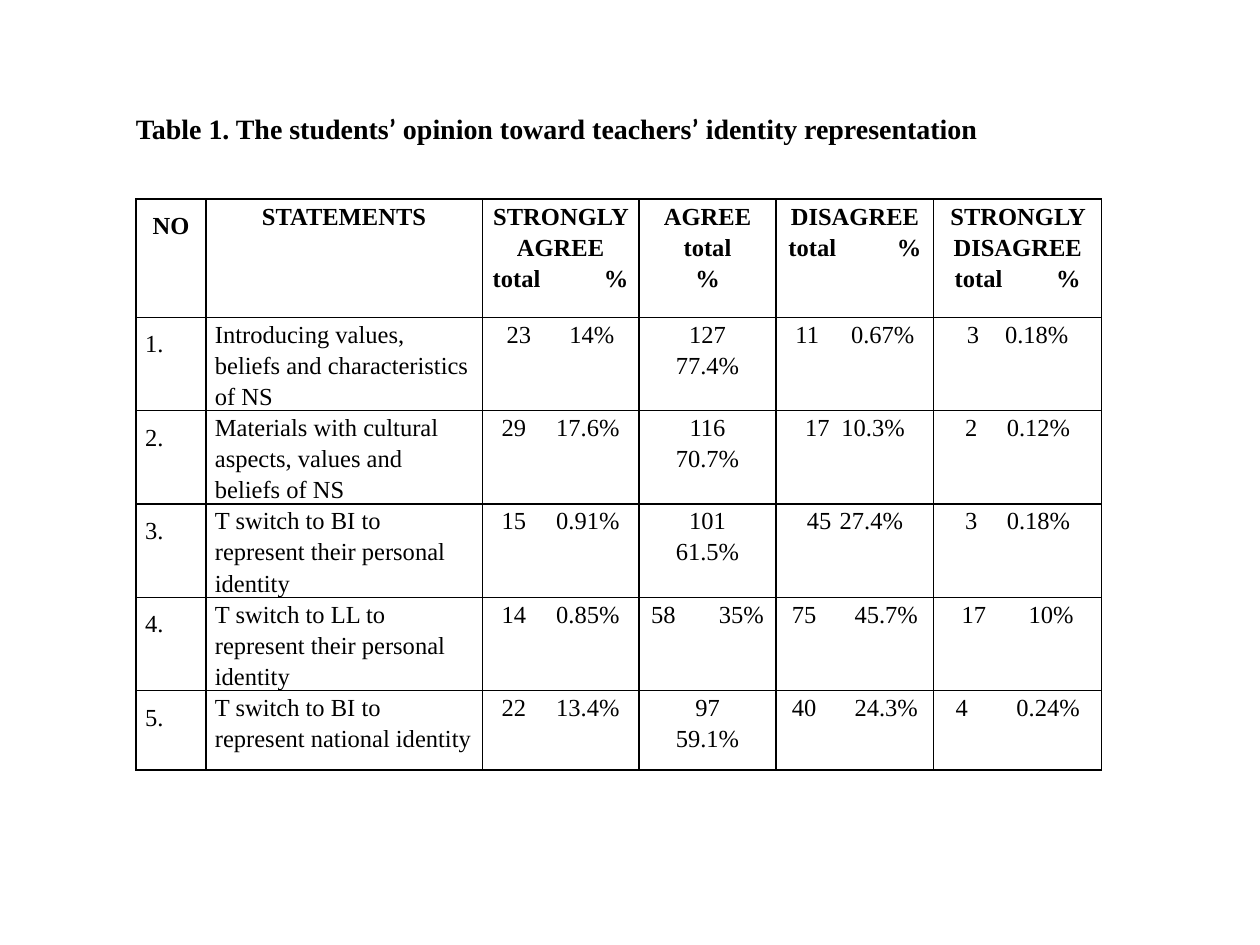
from dataclasses import dataclass

import pptx
import pptx.dml.color
import pptx.enum.text
import pptx.oxml.ns
import pptx.util
from lxml import etree

Pt = pptx.util.Pt
ALIGN = pptx.enum.text.PP_ALIGN
BLACK = pptx.dml.color.RGBColor(0x00, 0x00, 0x00)
WHITE = pptx.dml.color.RGBColor(0xFF, 0xFF, 0xFF)
FONT = "Times New Roman"
QUOTE_FONT = "Calibri"
TITLE = "Table 1. The students’ opinion toward teachers’ identity representation"
TABLE_LEFT, TABLE_TOP = 77.8, 113.8
COLUMN_WIDTHS = [39.8, 158, 89.5, 78.5, 90, 96]
HEADER_HEIGHT, ROW_HEIGHT = 67.5, 45.4
CELL_MARGIN = 5.2


@dataclass(frozen=True)
class Share:
    """A total and its percentage, set apart by inset from both cell edges.

    Without an inset the two stand centred, one below the other.
    """
    total: str
    percent: str
    inset: float | None = None


@dataclass(frozen=True)
class Heading:
    label: str
    share: Share


@dataclass(frozen=True)
class Statement:
    text: str
    shares: tuple[Share, ...]


HEADINGS = [
    Heading("STRONGLY AGREE", Share("total", "%", 6)),
    Heading("AGREE", Share("total", "%")),
    Heading("DISAGREE", Share("total", "%", 7)),
    Heading("STRONGLY DISAGREE", Share("total", "%", 12)),
]
STATEMENTS = [
    Statement("Introducing values, beliefs and characteristics of NS",
              (Share("23", "14%", 14), Share("127", "77.4%"),
               Share("11", "0.67%", 11), Share("3", "0.18%", 19))),
    Statement("Materials with cultural aspects, values and beliefs of NS",
              (Share("29", "17.6%", 11), Share("116", "70.7%"),
               Share("17", "10.3%", 16.5), Share("2", "0.12%", 18))),
    Statement("T switch to BI to represent their personal identity",
              (Share("15", "0.91%", 11), Share("101", "61.5%"),
               Share("45", "27.4%", 17.5), Share("3", "0.18%", 18))),
    Statement("T switch to LL to represent their personal identity",
              (Share("14", "0.85%", 11), Share("58", "35%", 7),
               Share("75", "45.7%", 9), Share("17", "10%", 16))),
    Statement("T switch to BI to represent national identity",
              (Share("22", "13.4%", 11), Share("97", "59.1%"),
               Share("40", "24.3%", 9), Share("4", "0.24%", 12.5))),
]


def format_paragraph(paragraph, size: float, bold: bool) -> None:
    font = paragraph.font
    font.name, font.size, font.bold = FONT, Pt(size), bold
    font.color.rgb = BLACK


def add_tab_stops(paragraph, stops: list[tuple[float, str]]) -> None:
    properties = paragraph._p.get_or_add_pPr()
    tab_list = etree.SubElement(properties, pptx.oxml.ns.qn("a:tabLst"))
    for position, alignment in stops:
        etree.SubElement(tab_list, pptx.oxml.ns.qn("a:tab"),
                         pos=str(int(Pt(position))), algn=alignment)


def write_text(paragraph, text: str, bold: bool = False,
               align=ALIGN.LEFT, spacing: float = 1.15) -> None:
    paragraph.text = text
    paragraph.alignment = align
    paragraph.line_spacing = spacing
    format_paragraph(paragraph, 14, bold)


def write_share(paragraph, share: Share, width: float, bold: bool = False) -> None:
    if share.inset is None:
        write_text(paragraph, f"{share.total}\v{share.percent}", bold, ALIGN.CENTER)
        return
    paragraph.line_spacing = 1.15
    add_tab_stops(paragraph, [(share.inset - CELL_MARGIN, "l"),
                              (width - share.inset - CELL_MARGIN, "r")])
    write_text(paragraph, f"\t{share.total}\t{share.percent}", bold)


def style_cell(cell) -> None:
    """Give the cell narrow margins, a black outline and a white fill."""
    cell.margin_left = cell.margin_right = Pt(CELL_MARGIN)
    cell.margin_top = cell.margin_bottom = 0
    properties = cell._tc.get_or_add_tcPr()
    for side in ("lnL", "lnR", "lnT", "lnB"):
        line = etree.SubElement(properties, pptx.oxml.ns.qn(f"a:{side}"), w=str(int(Pt(1))))
        fill = etree.SubElement(line, pptx.oxml.ns.qn("a:solidFill"))
        etree.SubElement(fill, pptx.oxml.ns.qn("a:srgbClr"), val=str(BLACK))
    cell.fill.solid()
    cell.fill.fore_color.rgb = WHITE


def add_title(slide) -> None:
    title = slide.shapes.title
    title.left, title.top, title.width, title.height = Pt(54), Pt(60), Pt(528), Pt(26.6)
    frame = title.text_frame
    frame.word_wrap = True
    frame.auto_size = pptx.enum.text.MSO_AUTO_SIZE.NONE
    frame.vertical_anchor = pptx.enum.text.MSO_ANCHOR.MIDDLE
    paragraph = frame.paragraphs[0]
    paragraph.alignment = ALIGN.CENTER
    format_paragraph(paragraph, 16, True)
    for index, part in enumerate(TITLE.split("’")):
        if index:
            quote = paragraph.add_run()
            quote.text, quote.font.name = "’", QUOTE_FONT
        paragraph.add_run().text = part


def add_opinion_table(slide) -> None:
    row_heights = [HEADER_HEIGHT] + [ROW_HEIGHT] * len(STATEMENTS)
    table = slide.shapes.add_table(
        len(row_heights), len(COLUMN_WIDTHS), Pt(TABLE_LEFT), Pt(TABLE_TOP),
        Pt(sum(COLUMN_WIDTHS)), Pt(sum(row_heights))).table
    table.first_row = table.horz_banding = False
    for column, width in zip(table.columns, COLUMN_WIDTHS):
        column.width = Pt(width)
    for row, height in zip(table.rows, row_heights):
        row.height = Pt(height)
    for cell in table.iter_cells():
        style_cell(cell)

    def first_paragraph(row: int, column: int):
        return table.cell(row, column).text_frame.paragraphs[0]

    write_text(first_paragraph(0, 0), "NO", True, ALIGN.CENTER, 1.5)
    write_text(first_paragraph(0, 1), "STATEMENTS", True, ALIGN.CENTER)
    for column, heading in enumerate(HEADINGS, start=2):
        write_text(first_paragraph(0, column), heading.label, True, ALIGN.CENTER)
        share_paragraph = table.cell(0, column).text_frame.add_paragraph()
        write_share(share_paragraph, heading.share, COLUMN_WIDTHS[column], True)
    for row, statement in enumerate(STATEMENTS, start=1):
        write_text(first_paragraph(row, 0), f"{row}.", spacing=1.5)
        write_text(first_paragraph(row, 1), statement.text)
        for column, share in enumerate(statement.shares, start=2):
            write_share(first_paragraph(row, column), share, COLUMN_WIDTHS[column])


def main() -> None:
    presentation = pptx.Presentation()
    presentation.slide_width, presentation.slide_height = Pt(720), Pt(540)
    slide = presentation.slides.add_slide(presentation.slide_layouts[5])
    add_opinion_table(slide)
    add_title(slide)
    presentation.save("out.pptx")


if __name__ == "__main__":
    main()
